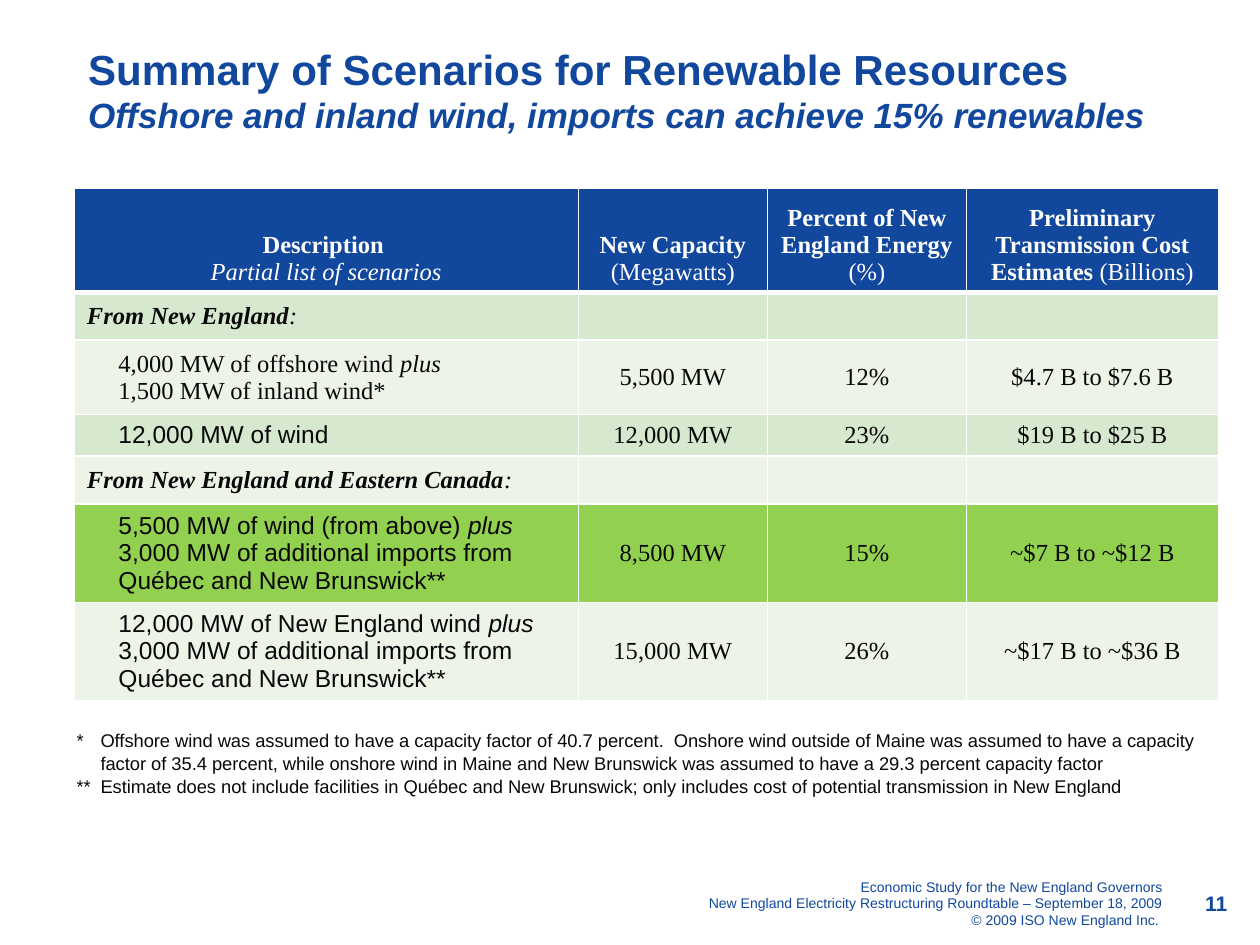
from lxml import etree
from pptx import Presentation
from pptx.dml.color import RGBColor
from pptx.enum.text import MSO_ANCHOR as Anchor, PP_ALIGN as Align
from pptx.oxml.ns import qn
from pptx.util import Inches, Pt

BLUE, INK, WHITE = "11479D", "080808", "FFFFFF"
GREEN, PALE, HIGHLIGHT = "D6E8CD", "ECF4E8", "92D050"
SERIF, SANS = "Times New Roman", "Arial"

COLUMNS = [4, 1.5, 1.58, 2]
HEADER_HEIGHT = 0.83
# Runs are (text, style); style holds "b" for bold and "i" for italic.
HEADERS = [
    [[("Description ", "b")], [("Partial list of scenarios", "i")]],
    [[("New Capacity ", "b"), ("(Megawatts)", "")]],
    [[("Percent of New England Energy", "b"), (" (%)", "")]],
    [[("Preliminary Transmission Cost Estimates ", "b"), ("(Billions)", "")]],
]
IMPORTS = ("3,000 MW of additional imports from Québec and New Brunswick**", "")
# Height, fill, description font, description paragraphs, values
ROWS = [
    (0.33, GREEN, SERIF, [[("From New England", "bi"), (":", "i")]], []),
    (0.59, PALE, SERIF,
     [[("4,000 MW of offshore wind ", ""), ("plus", "i")],
      [("1,500 MW of inland wind*", "")]],
     ["5,500 MW", "12%", "$4.7 B to $7.6 B"]),
    (0.33, GREEN, SANS, [[("12,000 MW of wind", "")]],
     ["12,000 MW", "23%", "$19 B to $25 B"]),
    (0.33, PALE, SERIF,
     [[("From New England and Eastern Canada", "bi"), (":", "i")]], []),
    (0.75, HIGHLIGHT, SANS,
     [[("5,500 MW of wind (from above) ", ""), ("plus", "i")], [IMPORTS]],
     ["8,500 MW", "15%", "~$7 B to ~$12 B"]),
    (0.78, PALE, SANS,
     [[("12,000 MW of New England wind ", ""), ("plus ", "i"), IMPORTS]],
     ["15,000 MW", "26%", "~$17 B to ~$36 B"]),
]
FOOTNOTES = [
    "*\tOffshore wind was assumed to have a capacity factor of 40.7 percent.  "
    "Onshore wind outside of Maine was assumed to have a capacity factor of "
    "35.4 percent, while onshore wind in Maine and New Brunswick was assumed "
    "to have a 29.3 percent capacity factor",
    "**\tEstimate does not include facilities in Québec and New Brunswick; "
    "only includes cost of potential transmission in New England",
]
FOOTER = [
    "Economic Study for the New England Governors",
    "New England Electricity Restructuring Roundtable – September 18, 2009",
    "© 2009 ISO New England Inc. ",
]


def rgb(color):
    return RGBColor.from_string(color)


def add_run(p, text, size, color, font=SANS, style=""):
    r = p.add_run()
    r.text = text
    r.font.size, r.font.name = Pt(size), font
    r.font.color.rgb = rgb(color)
    r.font.bold, r.font.italic = "b" in style, "i" in style


def write(tf, paragraphs, size, color, font=SANS, align=Align.LEFT,
          left=0, hanging=0, spacing=None):
    """Fill a text frame; each paragraph is a list of (text, style) runs."""
    for i, runs in enumerate(paragraphs):
        p = tf.add_paragraph() if i else tf.paragraphs[0]
        p.alignment = align
        if spacing:
            p.line_spacing = spacing
        if left:
            p_pr = p._p.get_or_add_pPr()
            p_pr.set("marL", str(Inches(left)))
            p_pr.set("indent", str(-Inches(hanging)))
        for text, style in runs:
            add_run(p, text, size, color, font, style)


def add_box(slide, box, margins=(0.1, 0.05), anchor=Anchor.TOP):
    tf = slide.shapes.add_textbox(*map(Inches, box)).text_frame
    tf.word_wrap = True
    tf.vertical_anchor = anchor
    tf.margin_left = tf.margin_right = Inches(margins[0])
    tf.margin_top = tf.margin_bottom = Inches(margins[1])
    return tf


def add_title(slide, box):
    tf = add_box(slide, box, (0.11, 0.06), Anchor.MIDDLE)
    p = tf.paragraphs[0]
    add_run(p, "Summary of Scenarios for Renewable Resources", 24, BLUE, style="b")
    p.add_line_break()
    add_run(p, "Offshore and inland wind, imports can achieve 15% renewables",
            20, BLUE, style="bi")


def format_cell(cell, fill, anchor, bottom=1):
    """Give a cell its fill, anchor and white borders."""
    cell.vertical_anchor = anchor
    tc_pr = cell._tc.get_or_add_tcPr()
    for side, width in (("L", 1), ("R", 1), ("T", 1), ("B", bottom)):
        line = etree.SubElement(tc_pr, qn(f"a:ln{side}"), w=str(Pt(width)))
        solid = etree.SubElement(line, qn("a:solidFill"))
        etree.SubElement(solid, qn("a:srgbClr"), val=WHITE)
    cell.fill.solid()
    cell.fill.fore_color.rgb = rgb(fill)


def add_scenarios(slide, box):
    table = slide.shapes.add_table(len(ROWS) + 1, len(COLUMNS),
                                   *map(Inches, box)).table
    for column, width in zip(table.columns, COLUMNS):
        column.width = Inches(width)
    heights = [HEADER_HEIGHT] + [row[0] for row in ROWS]
    for row, height in zip(table.rows, heights):
        row.height = Inches(height)

    for c, paragraphs in enumerate(HEADERS):
        cell = table.cell(0, c)
        format_cell(cell, BLUE, Anchor.BOTTOM, bottom=3)
        write(cell.text_frame, paragraphs, 14, WHITE, SERIF, Align.CENTER)

    for r, (_, fill, font, description, values) in enumerate(ROWS, 1):
        for c in range(len(COLUMNS)):
            cell = table.cell(r, c)
            format_cell(cell, fill, Anchor.MIDDLE)
            cell.margin_top = cell.margin_bottom = Inches(0.04)
        write(table.cell(r, 0).text_frame, description, 14, INK, font,
              left=0.25 if values else 0)
        for c, value in enumerate(values, 1):
            write(table.cell(r, c).text_frame, [[(value, "")]], 14, INK,
                  SERIF, Align.CENTER)


def add_footnotes(slide, box):
    write(add_box(slide, box), [[(note, "")] for note in FOOTNOTES], 10.5, INK,
          left=0.19, hanging=0.19, spacing=1.05)


def add_footer(slide, box):
    write(add_box(slide, box), [[(line, "")] for line in FOOTER], 8, BLUE,
          align=Align.RIGHT)


def add_page_number(slide, box):
    write(add_box(slide, box, (0.11, 0.06)), [[("11", "b")]], 12, BLUE,
          align=Align.RIGHT)


def main():
    prs = Presentation()
    prs.slide_width, prs.slide_height = Inches(10), Inches(7.5)
    s = prs.slides.add_slide(prs.slide_layouts[6])
    add_footer(s, (4.83, 6.92, 4.5, 0.64))
    add_title(s, (0.59, 0, 9.08, 1.42))
    add_scenarios(s, (0.59, 1.49, 9.08, 3.94))
    add_page_number(s, (9.42, 7.01, 0.43, 0.4))
    add_footnotes(s, (0.51, 5.73, 9.16, 0.63))
    prs.save("out.pptx")


if __name__ == "__main__":
    main()
